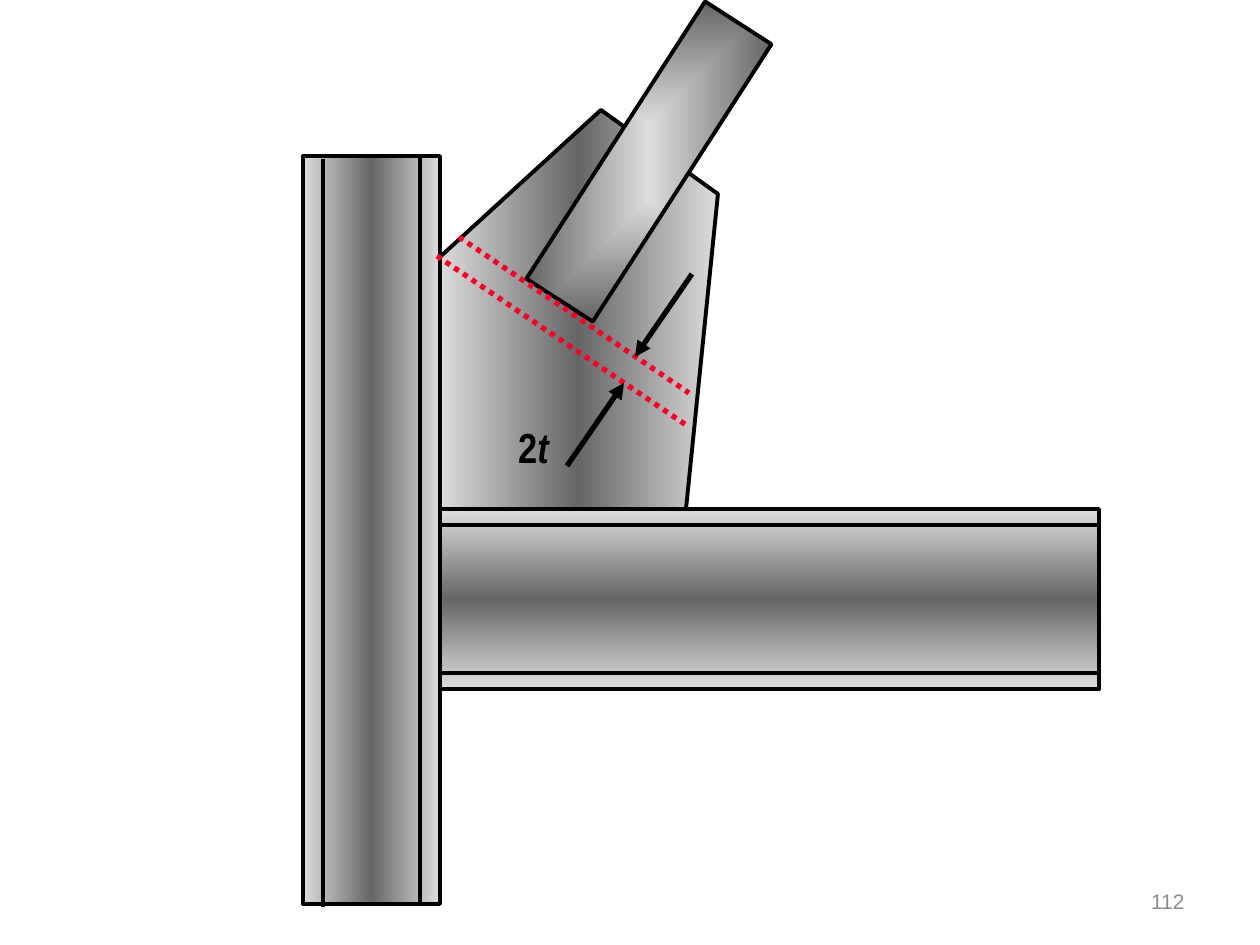
from dataclasses import dataclass

import lxml.etree
import pptx
import pptx.dml.color
import pptx.enum.dml
import pptx.enum.shapes
import pptx.enum.text
import pptx.oxml
import pptx.oxml.ns
import pptx.util

EMU_PER_PX = 914400 / 126
RGB = pptx.dml.color.RGBColor.from_string
PP_ALIGN = pptx.enum.text.PP_ALIGN
ANCHOR = pptx.enum.text.MSO_ANCHOR


@dataclass(frozen=True)
class Theme:
    light: str = "DDDDDD"
    dark: str = "666666"
    outline: str = "000000"
    fold: str = "FC0128"
    muted: str = "8C8C8C"
    label_font: str = "Arial Narrow"
    number_font: str = "Arial"
    label_size: int = 24
    number_size: int = 12
    edge: float = 2.25
    heavy: int = 3


THEME = Theme()
STEEL = ((0, THEME.light), (50, THEME.dark), (100, THEME.light))
ACROSS = '<a:lin ang="0" scaled="1"/>'
DOWN = '<a:lin ang="5400000" scaled="1"/>'
FROM_CENTRE = (
    '<a:path path="shape"><a:fillToRect l="50000" t="50000" r="50000" b="50000"/></a:path>'
)


def px(*lengths):
    return [pptx.util.Emu(round(length * EMU_PER_PX)) for length in lengths]


def apply(target, values):
    for name, value in values.items():
        setattr(target, name, value)


def set_line(line, color=THEME.outline, width=THEME.edge):
    line.color.rgb = RGB(color)
    line.width = pptx.util.Pt(width)


def style_steel(shape, stops, direction):
    shape.shadow.inherit = False
    shape.fill.background()
    stop_xml = "".join(
        f'<a:gs pos="{place * 1000}"><a:srgbClr val="{color}"/></a:gs>' for place, color in stops
    )
    gradient = pptx.oxml.parse_xml(
        f'<a:gradFill {pptx.oxml.ns.nsdecls("a")} rotWithShape="1">'
        f"<a:gsLst>{stop_xml}</a:gsLst>{direction}</a:gradFill>"
    )
    properties = shape._element.spPr
    properties.replace(properties.find(pptx.oxml.ns.qn("a:noFill")), gradient)
    set_line(shape.line)


def add_plate(shapes, bounds, stops, direction, rotation=0):
    plate = shapes.add_shape(pptx.enum.shapes.MSO_SHAPE.RECTANGLE, *px(*bounds))
    plate.rotation = rotation
    style_steel(plate, stops, direction)


def add_line(shapes, ends, color=THEME.outline, width=THEME.edge, dash=None, arrow=False):
    line = shapes.add_connector(pptx.enum.shapes.MSO_CONNECTOR.STRAIGHT, *px(*ends))
    set_line(line.line, color, width)
    if dash:
        line.line.dash_style = dash
    if arrow:
        outline = line.line._get_or_add_ln()
        lxml.etree.SubElement(outline, pptx.oxml.ns.qn("a:tailEnd"), type="triangle")
    lxml.etree.SubElement(line._element.spPr, pptx.oxml.ns.qn("a:effectLst"))


def add_member(page, bounds, direction, flange_lines):
    member = page.shapes.add_group_shape()
    add_plate(member.shapes, bounds, STEEL, direction)
    for ends in flange_lines:
        add_line(member.shapes, ends)


def add_gusset(page, corners):
    builder = page.shapes.build_freeform(*corners[0], scale=EMU_PER_PX)
    builder.add_line_segments(corners[1:], close=True)
    style_steel(builder.convert_to_shape(), STEEL, ACROSS)


def add_text(page, bounds, spans, align, anchor, font):
    box = page.shapes.add_textbox(*px(*bounds))
    apply(box.text_frame, {"word_wrap": True, "vertical_anchor": anchor})
    para = box.text_frame.paragraphs[0]
    para.alignment = align
    for text, italic, color in spans:
        span = para.add_run()
        span.text = text
        apply(span.font, {**font, "italic": italic})
        span.font.color.rgb = RGB(color)


def main():
    deck = pptx.Presentation()
    apply(deck, dict(zip(("slide_width", "slide_height"), px(1260, 945))))
    page = deck.slides.add_slide(deck.slide_layouts[6])

    add_gusset(page, [(440, 257), (601, 110), (718, 194), (686, 510), (438, 510)])
    brace_stops = ((0, THEME.light), (100, THEME.dark))
    add_plate(page.shapes, (484, 122, 330, 79), brace_stops, FROM_CENTRE, 302.8)

    beam_lines = [(440, y, 1099, y) for y in (673, 525)]
    add_member(page, (440, 509, 659, 180), DOWN, beam_lines)
    column_lines = [(420, 156, 420, 904), (323, 159, 323, 907)]
    add_member(page, (303, 156, 137, 748), ACROSS, column_lines)

    dots = pptx.enum.dml.MSO_LINE.ROUND_DOT
    for ends in ((437, 256, 689, 427), (459, 237, 689, 393)):
        add_line(page.shapes, ends, THEME.fold, THEME.heavy, dots)
    for ends in ((692, 274, 635, 357), (567, 466, 624, 383)):
        add_line(page.shapes, ends, width=THEME.heavy, arrow=True)

    label_font = {
        "name": THEME.label_font, "size": pptx.util.Pt(THEME.label_size), "bold": True,
    }
    label = [("2", False, THEME.outline), ("t", True, THEME.outline)]
    add_text(page, (465, 415, 137, 63), label, PP_ALIGN.CENTER, ANCHOR.TOP, label_font)
    number_font = {"name": THEME.number_font, "size": pptx.util.Pt(THEME.number_size)}
    number = [("112", False, THEME.muted)]
    add_text(page, (903, 876, 294, 50), number, PP_ALIGN.RIGHT, ANCHOR.MIDDLE, number_font)

    deck.save("out.pptx")


if __name__ == "__main__":
    main()
